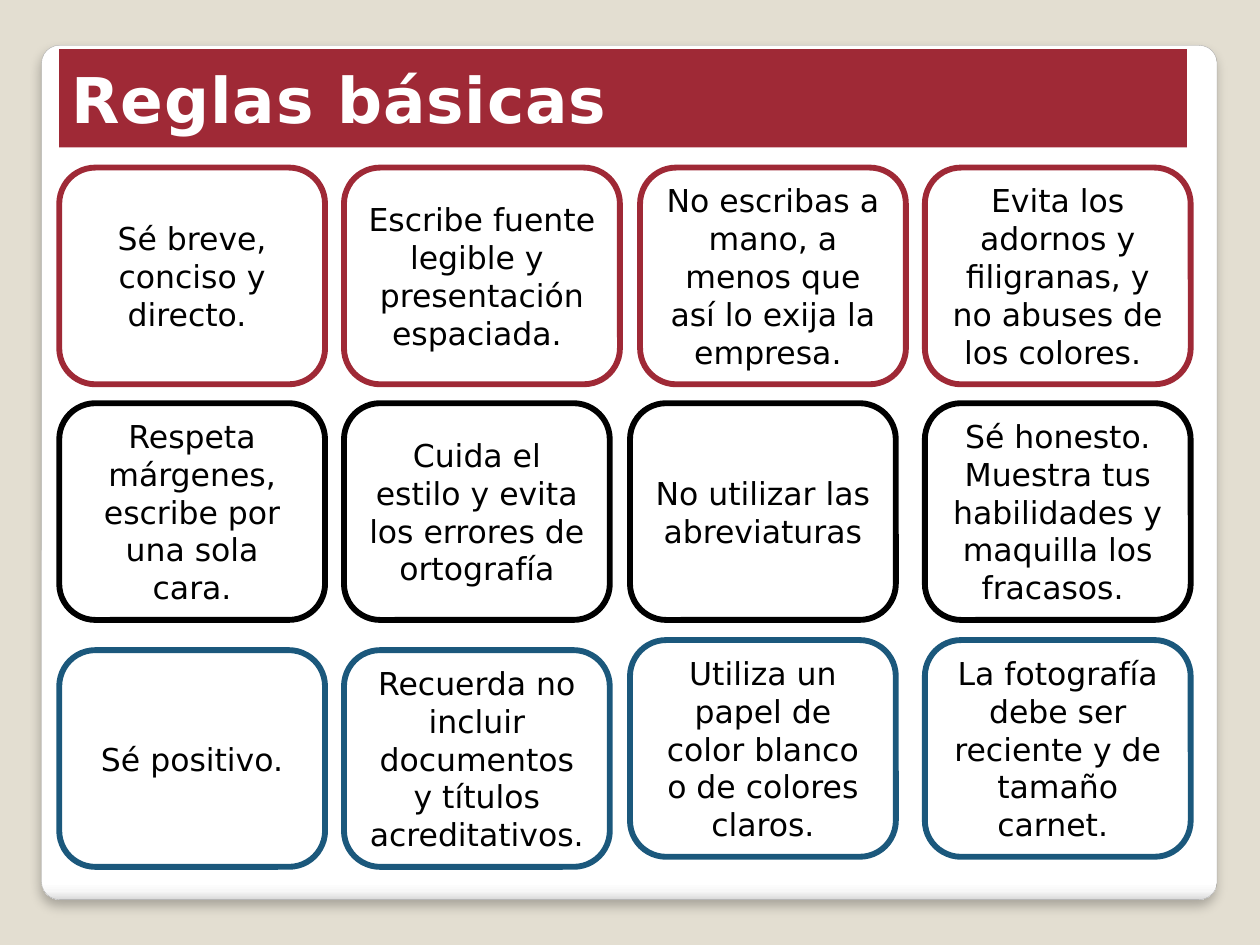
from lxml.etree import SubElement
from pptx import Presentation
from pptx.dml.color import RGBColor
from pptx.enum.shapes import MSO_SHAPE
from pptx.enum.text import MSO_ANCHOR, PP_ALIGN
from pptx.oxml import parse_xml
from pptx.oxml.ns import nsdecls, qn
from pptx.util import Inches, Pt

FONT = "DejaVu Sans"
SAND = RGBColor(0xE3, 0xDE, 0xD1)
WHITE = RGBColor(0xFF, 0xFF, 0xFF)
BLACK = RGBColor(0, 0, 0)
RED = RGBColor(0x9F, 0x29, 0x36)
BLUE = RGBColor(0x1B, 0x58, 0x7C)
GREY = RGBColor(0xA4, 0xA4, 0xA4)
PANEL_STOPS = [(0, WHITE), (98, WHITE), (99, RGBColor(0xF7, 0xF7, 0xF7)),
               (100, RGBColor(0xDA, 0xDA, 0xDA))]

RULE_WIDTH, RULE_HEIGHT = 2.11, 1.72
COLUMNS = [0.47, 2.73, 5, 7.34]
# Each rule: text, then any departure from the grid (left, top, width).
RULE_ROWS = [
    (RED, 1.33, [
        ("Sé breve, conciso y directo. ", {}),
        ("Escribe fuente legible y  presentación espaciada. ", {"width": 2.19}),
        ("No escribas a mano, a menos que así lo exija la empresa. ", {"left": 5.08}),
        ("Evita los adornos y filigranas, y no abuses de los colores. ", {}),
    ]),
    (BLACK, 3.2, [
        ("Respeta márgenes, escribe por una sola cara.", {}),
        ("Cuida el estilo y evita los errores de ortografía", {}),
        ("No utilizar las abreviaturas", {}),
        ("Sé honesto. Muestra tus habilidades y maquilla los fracasos. ", {}),
    ]),
    (BLUE, 5.08, [
        ("Sé positivo.", {"top": 5.16}),
        ("Recuerda no incluir documentos y títulos acreditativos.", {"top": 5.16}),
        ("Utiliza un papel de color blanco o de colores claros.", {}),
        ("La fotografía debe ser reciente y de tamaño carnet. ", {}),
    ]),
]


def add_block(slide, preset, left, top, width, height, fill, line=None, line_width=0):
    block = slide.shapes.add_shape(
        preset, Inches(left), Inches(top), Inches(width), Inches(height))
    block.shadow.inherit = False
    block.fill.solid()
    block.fill.fore_color.rgb = fill
    if line is None:
        block.line.fill.background()
    else:
        block.line.color.rgb = line
        block.line.width = Pt(line_width)
    return block


def write_text(block, text, size, color, align, bold=False):
    frame = block.text_frame
    frame.word_wrap = True
    frame.vertical_anchor = MSO_ANCHOR.MIDDLE
    paragraph = frame.paragraphs[0]
    paragraph.text = text
    paragraph.alignment = align
    font = paragraph.font
    font.name, font.size, font.bold = FONT, Pt(size), bold
    font.color.rgb = color
    return paragraph


def add_panel(slide):
    """Add the white card with a shaded lower edge and a soft shadow."""
    panel = add_block(slide, MSO_SHAPE.ROUNDED_RECTANGLE,
                      0.33, 0.36, 9.33, 6.78, WHITE, GREY, 0.16)
    panel.adjustments[0] = 0.021
    properties = panel.fill._xPr
    stops = "".join(f'<a:gs pos="{position * 1000}"><a:srgbClr val="{color}"/></a:gs>'
                    for position, color in PANEL_STOPS)
    gradient = parse_xml(f'<a:gradFill {nsdecls("a")}><a:gsLst>{stops}</a:gsLst>'
                         '<a:lin ang="5400000" scaled="0"/></a:gradFill>')
    properties.replace(properties.find(qn("a:solidFill")), gradient)
    shadow = SubElement(properties.find(qn("a:effectLst")), qn("a:outerShdw"),
                        blurRad=str(Pt(6)), dist=str(Pt(4)), dir="5400000",
                        algn="tl", rotWithShape="0")
    shadow_color = SubElement(shadow, qn("a:srgbClr"), val=str(BLACK))
    SubElement(shadow_color, qn("a:alpha"), val="25000")


def add_rule(slide, text, color, left, top, width=RULE_WIDTH):
    rule = add_block(slide, MSO_SHAPE.ROUNDED_RECTANGLE,
                     left, top, width, RULE_HEIGHT, WHITE, color, 3.35)
    write_text(rule, text, 18, BLACK, PP_ALIGN.CENTER)


def add_title(slide, text):
    banner = add_block(slide, MSO_SHAPE.RECTANGLE, 0.47, 0.39, 8.95, 0.78, RED)
    title = write_text(banner, text, 36, WHITE, PP_ALIGN.LEFT, bold=True)
    title.runs[0].font._element.set("spc", "50")


def main():
    presentation = Presentation()
    presentation.slide_width = Inches(10)
    presentation.slide_height = Inches(7.5)
    slide = presentation.slides.add_slide(presentation.slide_layouts[6])
    slide.background.fill.solid()
    slide.background.fill.fore_color.rgb = SAND

    add_panel(slide)
    for color, top, rules in RULE_ROWS:
        for left, (text, departure) in zip(COLUMNS, rules):
            add_rule(slide, text, color, **{"left": left, "top": top, **departure})
    add_title(slide, "Reglas básicas")
    presentation.save("out.pptx")


if __name__ == "__main__":
    main()
